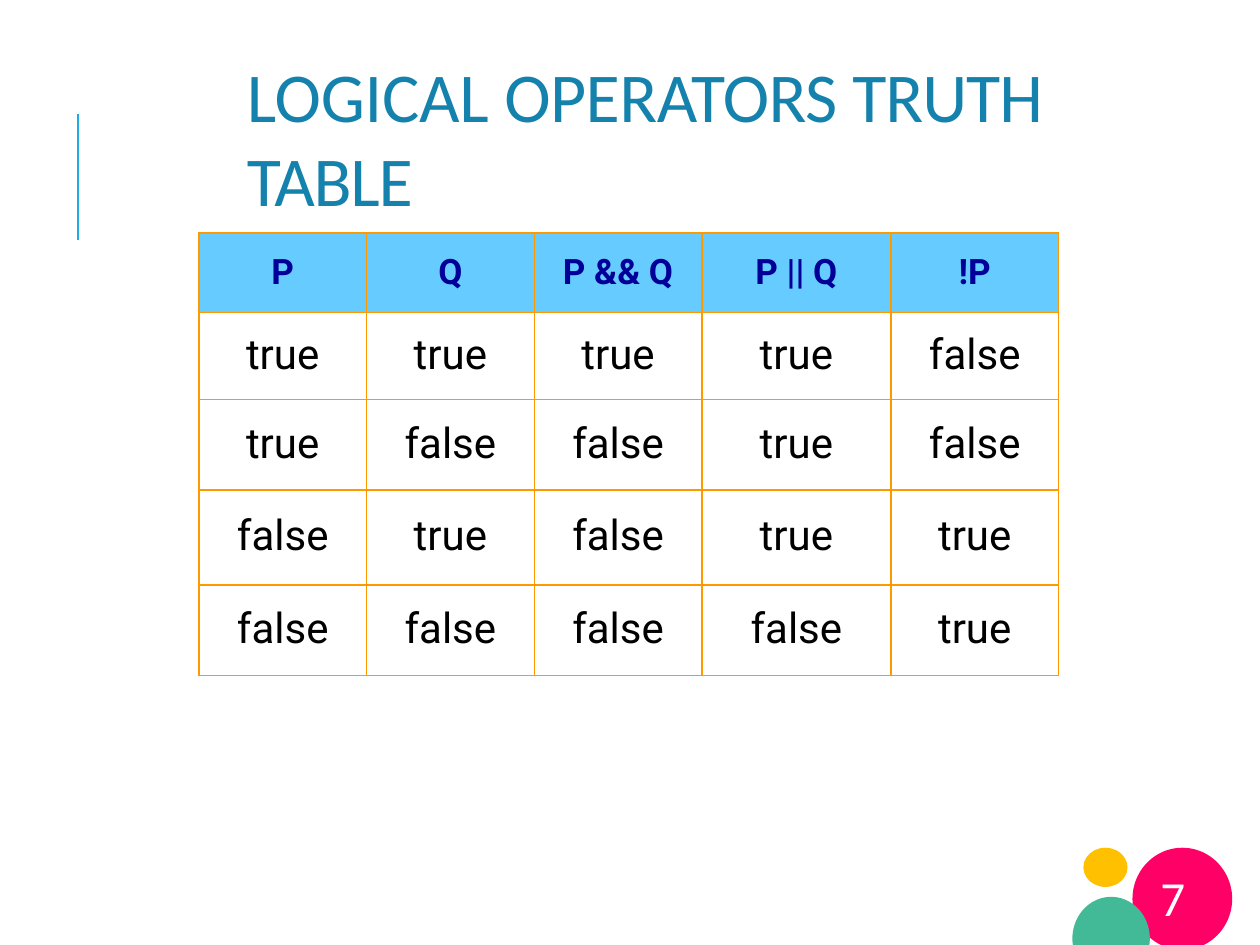
from math import cos, radians, sin

from lxml import etree
from pptx import Presentation
from pptx import util as u
from pptx.dml.color import RGBColor
from pptx.enum import shapes, text
from pptx.oxml import ns

BLUE_LINE = RGBColor(0x1C, 0xAD, 0xE4)
TITLE_BLUE = RGBColor(0x14, 0x82, 0xAC)
HEADER_FILL = RGBColor(0x66, 0xCC, 0xFF)
HEADER_TEXT = RGBColor(0x00, 0x00, 0x99)
BORDER = RGBColor(0xFF, 0x99, 0x00)
BLACK = RGBColor(0x00, 0x00, 0x00)
WHITE = RGBColor(0xFF, 0xFF, 0xFF)
YELLOW = RGBColor(0xFF, 0xC0, 0x00)
PINK = RGBColor(0xFF, 0x00, 0x66)
GREEN = RGBColor(0x42, 0xBA, 0x97)

TITLE_RUNS = [("LOGICAL ", -0.1), ("OPERATORS ", -0.3), ("TRUTH ", -0.6), ("TABLE", -0.7)]
TRUTH_ROWS = [
    ["P", "Q", "P && Q", "P || Q", "!P"],
    ["true", "true", "true", "true", "false"],
    ["true", "false", "false", "true", "false"],
    ["false", "true", "false", "true", "true"],
    ["false", "false", "false", "false", "true"],
]
COLUMN_WIDTHS = [3.38, 3.38, 3.38, 3.81, 3.38]
ROW_HEIGHTS = [1.6, 1.75, 1.83, 1.91, 1.83]
TOP_MARGINS = [0.37, 0.36, 0.4, 0.44, 0.4]


def style_font(font, size, color, name="Calibri", bold=False):
    """Set the typeface, size, colour and weight of a font."""
    font.name, font.size, font.bold = name, u.Pt(size), bold
    font.color.rgb = color


def fill_plain(shape, color):
    """Give a shape a solid fill without outline or shadow."""
    shape.shadow.inherit = False
    shape.fill.solid()
    shape.fill.fore_color.rgb = color
    shape.line.fill.background()


def add_text_frame(slide, left, top, width, height):
    """Add a wrapping, vertically centred text box without insets."""
    box = slide.shapes.add_textbox(u.Cm(left), u.Cm(top), u.Cm(width), u.Cm(height))
    frame = box.text_frame
    frame.word_wrap = True
    frame.auto_size = text.MSO_AUTO_SIZE.SHAPE_TO_FIT_TEXT
    frame.vertical_anchor = text.MSO_ANCHOR.MIDDLE
    frame.margin_left = frame.margin_right = frame.margin_top = frame.margin_bottom = 0
    return frame


def add_accent_line(slide, left, top, height):
    """Draw the vertical rule beside the title."""
    line = slide.shapes.add_connector(
        shapes.MSO_CONNECTOR.STRAIGHT, u.Cm(left), u.Cm(top + height), u.Cm(left), u.Cm(top)
    )
    line.line.color.rgb = BLUE_LINE
    line.line.width = u.Pt(1.5)
    etree.SubElement(line._element.spPr, ns.qn("a:effectLst"))


def add_title(slide, left, top, width, height):
    """Write the slide title with its letter spacing."""
    frame = add_text_frame(slide, left, top, width, height)
    for wording, spacing in TITLE_RUNS:
        run = frame.paragraphs[0].add_run()
        run.text = wording
        style_font(run.font, 40, TITLE_BLUE)
        run._r.get_or_add_rPr().set("spc", str(round(spacing * 100)))


def add_page_badge(slide, left, top, number):
    """Draw the corner figure and the page number on its disc."""
    for x, width, height, color in [(0.22, 0.89, 0.79, YELLOW), (1.21, 2.01, 2.06, PINK)]:
        disc = slide.shapes.add_shape(
            shapes.MSO_SHAPE.OVAL, u.Cm(left + x), u.Cm(top), u.Cm(width), u.Cm(height)
        )
        fill_plain(disc, color)

    center_x, center_y = left + 0.78, top + 1.83
    outline = [
        (u.Cm(center_x + 0.78 * cos(radians(angle))), u.Cm(center_y + 0.84 * sin(radians(angle))))
        for angle in range(143, 398, 2)
    ]
    builder = slide.shapes.build_freeform(*outline[0])
    builder.add_line_segments(outline[1:], close=True)
    fill_plain(builder.convert_to_shape(), GREEN)

    frame = add_text_frame(slide, left + 0.96, top + 0.89, 2.03, 0.76)
    frame.margin_left = u.Cm(0.1)
    frame.text = number
    paragraph = frame.paragraphs[0]
    paragraph.alignment = text.PP_ALIGN.CENTER
    paragraph.line_spacing = u.Pt(18.1)
    style_font(paragraph.runs[0].font, 28, WHITE)


def add_cell_borders(cell):
    """Draw a thin border on all four sides of a cell."""
    properties = cell._tc.get_or_add_tcPr()
    for side in ("lnL", "lnR", "lnT", "lnB"):
        line = etree.SubElement(properties, ns.qn(f"a:{side}"), w=str(u.Pt(1)))
        fill = etree.SubElement(line, ns.qn("a:solidFill"))
        etree.SubElement(fill, ns.qn("a:srgbClr"), val=str(BORDER))


def fill_cell(cell, wording, top_margin, is_header):
    """Write and format one truth table cell."""
    cell.margin_left = cell.margin_right = cell.margin_bottom = 0
    cell.margin_top = u.Cm(top_margin)
    add_cell_borders(cell)
    cell.text = wording
    paragraph = cell.text_frame.paragraphs[0]
    paragraph.alignment = text.PP_ALIGN.CENTER
    font = paragraph.runs[0].font
    if is_header:
        cell.fill.solid()
        cell.fill.fore_color.rgb = HEADER_FILL
        style_font(font, 20, HEADER_TEXT, "Roboto", True)
    else:
        cell.fill.background()
        style_font(font, 24, BLACK, "Roboto")


def add_truth_table(slide, left, top):
    """Build the truth table of the logical operators."""
    table = slide.shapes.add_table(
        len(TRUTH_ROWS), len(COLUMN_WIDTHS), u.Cm(left), u.Cm(top),
        u.Cm(sum(COLUMN_WIDTHS)), u.Cm(sum(ROW_HEIGHTS)),
    ).table
    table.first_row = table.horz_banding = False
    for column, width in zip(table.columns, COLUMN_WIDTHS):
        column.width = u.Cm(width)
    for index, (row, height) in enumerate(zip(table.rows, ROW_HEIGHTS)):
        row.height = u.Cm(height)
        for cell, wording in zip(row.cells, TRUTH_ROWS[index]):
            fill_cell(cell, wording, TOP_MARGINS[index], index == 0)


def main():
    """Build and save the slide."""
    presentation = Presentation()
    presentation.slide_width, presentation.slide_height = u.Cm(25.4), u.Cm(19.05)
    slide = presentation.slides.add_slide(presentation.slide_layouts[6])
    add_accent_line(slide, 1.57, 2.29, 2.54)
    add_page_badge(slide, 21.62, 17.09, "7")
    add_title(slide, 4.98, 1.88, 16.71, 1.75)
    add_truth_table(slide, 4.01, 4.7)
    presentation.save("out.pptx")


if __name__ == "__main__":
    main()
